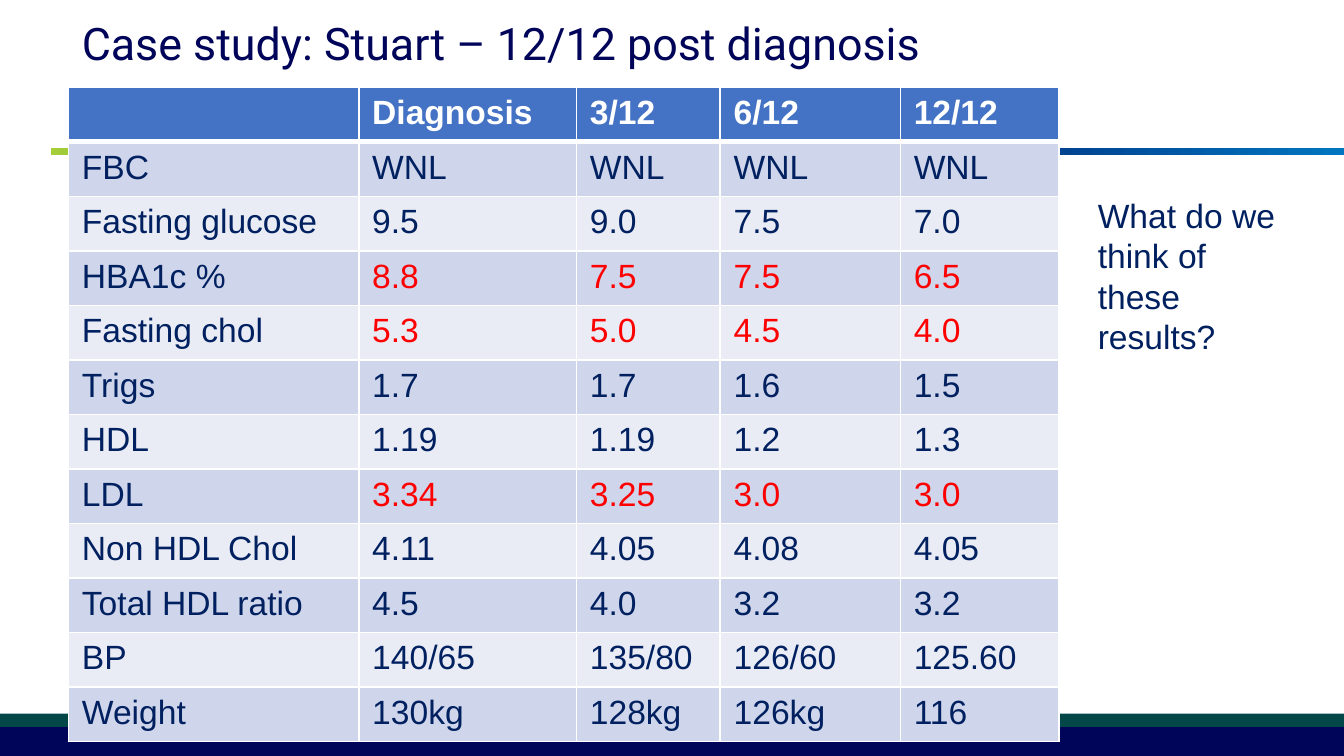
"""Build a slide with a table of one patient's results over a year."""
from lxml.etree import SubElement
from pptx import Presentation
from pptx.dml.color import RGBColor
from pptx.enum.shapes import MSO_SHAPE
from pptx.enum.text import MSO_ANCHOR
from pptx.oxml.ns import qn
from pptx.util import Inches, Pt

NAVY = RGBColor(0x00, 0x05, 0x59)
TEAL = RGBColor(0x03, 0x47, 0x48)
LIME = RGBColor(0xA6, 0xCE, 0x39)
AZURE = RGBColor(0x00, 0x76, 0xC0)
BLUE = RGBColor(0x44, 0x72, 0xC4)
INK = RGBColor(0x00, 0x20, 0x60)
RED = RGBColor(0xFF, 0x00, 0x00)
WHITE = RGBColor(0xFF, 0xFF, 0xFF)
BANDS = (RGBColor(0xE9, 0xEB, 0xF5), RGBColor(0xCF, 0xD5, 0xEA))

TITLE = "Case study: Stuart – 12/12 post diagnosis"
ASK = "What do we think of these results?"
ROWS = [
    ("", "Diagnosis", "3/12", "6/12", "12/12"),
    ("FBC", "WNL", "WNL", "WNL", "WNL"),
    ("Fasting glucose", "9.5", "9.0", "7.5", "7.0"),
    ("HBA1c %", "8.8", "7.5", "7.5", "6.5"),
    ("Fasting chol", "5.3", "5.0", "4.5", "4.0"),
    ("Trigs", "1.7", "1.7", "1.6", "1.5"),
    ("HDL", "1.19", "1.19", "1.2", "1.3"),
    ("LDL", "3.34", "3.25", "3.0", "3.0"),
    ("Non HDL Chol", "4.11", "4.05", "4.08", "4.05"),
    ("Total HDL ratio", "4.5", "4.0", "3.2", "3.2"),
    ("BP", "140/65", "135/80", "126/60", "125.60"),
    ("Weight", "130kg", "128kg", "126kg", "116"),
]
ALERTS = {"HBA1c %", "Fasting chol", "LDL"}
WIDTHS = (2.16, 1.62, 1.07, 1.34, 1.18)
HIGH = 4.87
STOPS = ((0, LIME), (36, TEAL), (52, NAVY), (100, AZURE))


def write(frame, text, size=18, font="Arial", color=INK, bold=False):
    run = frame.paragraphs[0].add_run()
    run.text = text
    run.font.size = Pt(size)
    run.font.name = font
    run.font.bold = bold
    run.font.color.rgb = color


def add_bar(slide, left, top, width, height, color=None):
    bar = slide.shapes.add_shape(MSO_SHAPE.RECTANGLE, *map(Inches, (left, top, width, height)))
    bar.shadow.inherit = False
    bar.line.fill.background()
    if color is not None:
        bar.fill.solid()
        bar.fill.fore_color.rgb = color
    return bar


def blend(bar, stops):
    bar.fill.gradient()
    bar.fill.gradient_angle = 0
    group = bar.element.spPr.find(".//" + qn("a:gsLst"))
    for old in list(group):
        group.remove(old)
    for place, color in stops:
        stop = SubElement(group, qn("a:gs"), pos=str(place * 1000))
        SubElement(stop, qn("a:srgbClr"), val=str(color))


def edge(cell, sides):
    props = cell._tc.get_or_add_tcPr()
    for side, width in sides.items():
        line = SubElement(props, qn("a:ln" + side), w=str(Pt(width)))
        fill = SubElement(line, qn("a:solidFill"))
        SubElement(fill, qn("a:srgbClr"), val=str(WHITE))


def add_box(slide, left, top, width, height):
    frame = slide.shapes.add_textbox(*map(Inches, (left, top, width, height))).text_frame
    frame.word_wrap = True
    return frame


def add_grid(slide, left, top):
    size = map(Inches, (left, top, sum(WIDTHS), HIGH))
    table = slide.shapes.add_table(len(ROWS), len(WIDTHS), *size).table
    for col, width in zip(table.columns, WIDTHS):
        col.width = Inches(width)
    for r, values in enumerate(ROWS):
        table.rows[r].height = Inches(HIGH / len(ROWS))
        head = r == 0
        for c, value in enumerate(values):
            cell = table.cell(r, c)
            edge(cell, {"L": 1, "R": 1, "T": 3 if r == 1 else 1, "B": 3 if head else 1})
            cell.fill.solid()
            cell.fill.fore_color.rgb = BLUE if head else BANDS[r % 2]
            alert = c > 0 and values[0] in ALERTS
            color = WHITE if head else RED if alert else INK
            if value:
                write(cell.text_frame, value, color=color, bold=head)


def main():
    deck = Presentation()
    deck.slide_width, deck.slide_height = Inches(10), Inches(10 * 9 / 16)
    slide = deck.slides.add_slide(deck.slide_layouts[6])
    add_bar(slide, 0, 5.31, 10, 0.1, TEAL)
    add_bar(slide, 0, 5.41, 10, 0.25, NAVY)
    blend(add_bar(slide, 0.38, 1.1, 9.62, 0.05), STOPS)
    title = add_box(slide, 0.51, -0.03, 9.35, 0.7)
    title.vertical_anchor = MSO_ANCHOR.MIDDLE
    write(title, TITLE, size=24, font="Roboto", color=NAVY)
    add_grid(slide, 0.51, 0.65)
    write(add_box(slide, 8.07, 1.4, 1.57, 1.92), ASK)
    deck.save("out.pptx")


if __name__ == "__main__":
    main()
